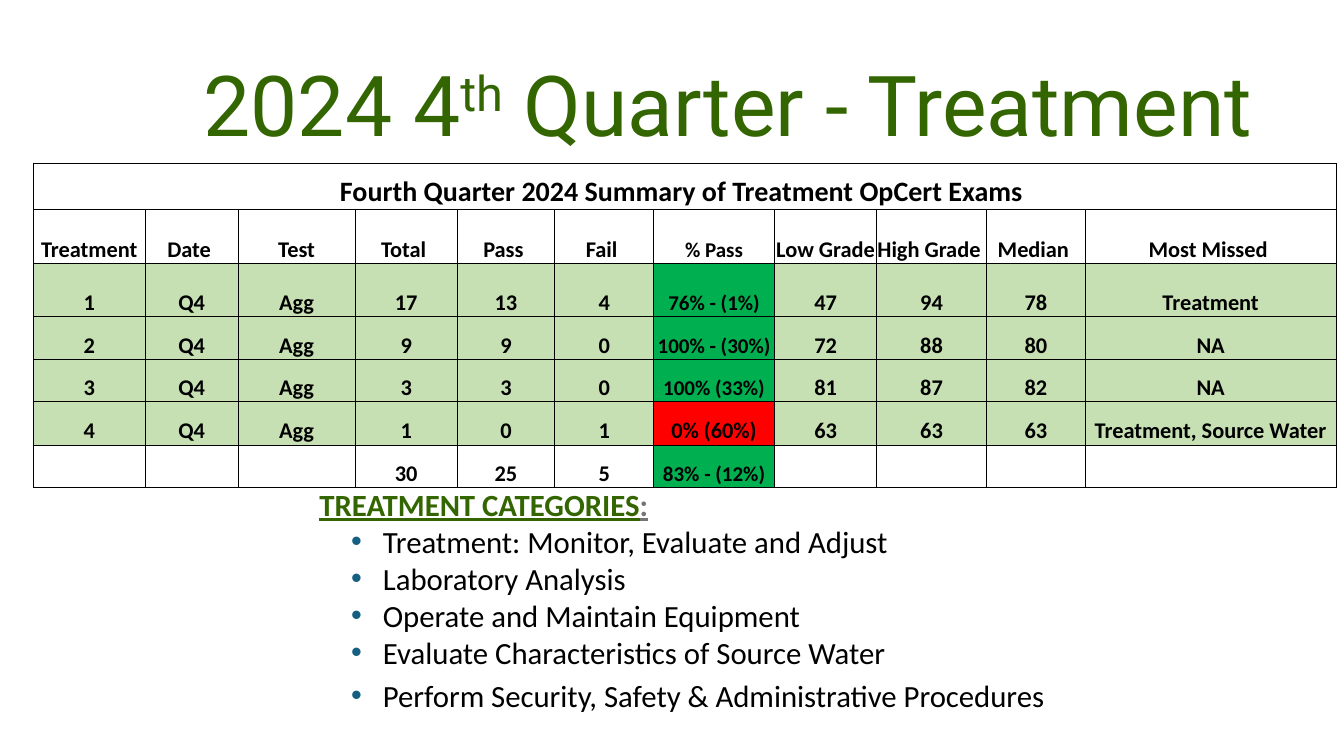
from lxml.etree import SubElement
from pptx import Presentation
from pptx.dml.color import RGBColor
from pptx.enum.text import MSO_ANCHOR as Anchor, PP_ALIGN as Align
from pptx.oxml.ns import qn
from pptx.util import Cm, Pt

COLORS = {
    "title": "336600", "colon": "747474", "text": "000000", "bullet": "156082",
    "border": "000000", "level": "C6E0B4", "good": "00B050", "bad": "FF0000",
}


def add_run(paragraph, text, color, **font_values):
    run = paragraph.add_run()
    run.text = text
    run.font.color.rgb = RGBColor.from_string(COLORS[color])
    for attribute, value in font_values.items():
        setattr(run.font, attribute, value)
    return run


def add_solid(parent, color):
    """Append a solid fill to an XML element."""
    fill = SubElement(parent, qn("a:solidFill"))
    SubElement(fill, qn("a:srgbClr"), val=COLORS[color])


deck = Presentation()
deck.slide_width, deck.slide_height = Cm(33.87), Cm(19.05)
slide = deck.slides.add_slide(deck.slide_layouts[6])

# Title
title = slide.shapes.add_textbox(Cm(3.45), Cm(1.24), Cm(29.79), Cm(2.79)).text_frame
title.word_wrap = True
title.vertical_anchor = Anchor.BOTTOM
heading = title.paragraphs[0]
heading.alignment = Align.CENTER
heading.line_spacing = 0.9
for part in ("2024 4", "th", " Quarter - Treatment"):
    run = add_run(heading, part, "title", size=Pt(60), name="Roboto")
    if part == "th":
        run.font._element.set("baseline", "30000")

# Treatment categories
categories = slide.shapes.add_textbox(Cm(7.8), Cm(12.12), Cm(20.02), Cm(6.99)).text_frame
categories.word_wrap = True
body_font = {"size": Pt(22), "name": "Calibri"}
lead = categories.paragraphs[0]
for part, color in (("TREATMENT CATEGORIES", "title"), (":", "colon")):
    add_run(lead, part, color, bold=True, underline=True, **body_font)

topics = [
    "Treatment: Monitor, Evaluate and Adjust",
    "Laboratory Analysis",
    "Operate and Maintain Equipment",
    "Evaluate Characteristics of Source Water",
    "Perform Security, Safety & Administrative Procedures",
]
for topic in topics:
    item = categories.add_paragraph()
    properties = item._p.get_or_add_pPr()
    properties.set("marL", str(Cm(1.6)))
    properties.set("indent", str(-Cm(0.8)))
    bullet_color = SubElement(properties, qn("a:buClr"))
    SubElement(bullet_color, qn("a:srgbClr"), val=COLORS["bullet"])
    SubElement(properties, qn("a:buFont"), typeface="Arial")
    SubElement(properties, qn("a:buChar"), char="•")
    item.space_before = Pt(4 if topic == topics[-1] else 0)
    add_run(item, topic, "text", **body_font)

# Exam summary
column_widths = [2.82, 2.34, 2.95, 2.57, 2.46, 2.49, 3.05, 2.57, 2.77, 2.49, 6.32]
row_heights = [1.17, 1.35, 1.35, 1.07, 1.07, 1.09, 1.07]
blank = ("",)
results = [
    ("Fourth Quarter 2024 Summary of Treatment OpCert Exams ",) + blank * 10,
    ("Treatment", "Date ", "Test", "Total ", "Pass ", "Fail ", "% Pass",
     "Low Grade ", "High Grade ", "Median ", "Most Missed "),
    ("1", "Q4", "Agg", "17", "13", "4", "76% - (1%)", "47", "94", "78", "Treatment"),
    ("2", "Q4", "Agg", "9", "9", "0", "100% - (30%)", "72", "88", "80", "NA"),
    ("3", "Q4", "Agg", "3", "3", "0", "100% (33%)", "81", "87", "82", "NA"),
    ("4", "Q4", "Agg", "1", "0", "1", "0% (60%)", "63", "63", "63",
     "Treatment, Source Water"),
    blank * 3 + ("30", "25", "5", "83% - (12%)") + blank * 4,
]
PASS_RATE = 6
FIRST_LEVEL, TOTALS = 2, 6
cell_format = {
    "margin_left": 0, "margin_right": 0, "margin_top": 0, "margin_bottom": 0,
    "vertical_anchor": Anchor.BOTTOM,
}

summary = slide.shapes.add_table(
    len(row_heights), len(column_widths), Cm(0.84), Cm(4.11),
    Cm(sum(column_widths)), Cm(sum(row_heights))).table
summary.first_row = summary.horz_banding = False
for column, width in zip(summary.columns, column_widths):
    column.width = Cm(width)
for row, height in zip(summary.rows, row_heights):
    row.height = Cm(height)
summary.cell(0, 0).merge(summary.cell(0, len(column_widths) - 1))

for r, result in enumerate(results):
    for c, value in enumerate(result):
        cell = summary.cell(r, c)
        for attribute, setting in cell_format.items():
            setattr(cell, attribute, setting)
        borders = cell._tc.get_or_add_tcPr()
        for side in ("lnL", "lnR", "lnT", "lnB"):
            add_solid(SubElement(borders, qn(f"a:{side}"), w=str(Pt(0.5))), "border")

        failed = value.startswith("0%")
        if c == PASS_RATE and r >= FIRST_LEVEL:
            shade = "bad" if failed else "good"
        else:
            shade = "level" if FIRST_LEVEL <= r < TOTALS else None
        if shade:
            cell.fill.solid()
            cell.fill.fore_color.rgb = RGBColor.from_string(COLORS[shade])
        else:
            cell.fill.background()

        if value:
            size = 20 if r == 0 else 15 if c == PASS_RATE and not failed else 16
            entry = cell.text_frame.paragraphs[0]
            entry.alignment = Align.CENTER
            add_run(entry, value, "text", size=Pt(size), name="Calibri", bold=True)

deck.save("out.pptx")
